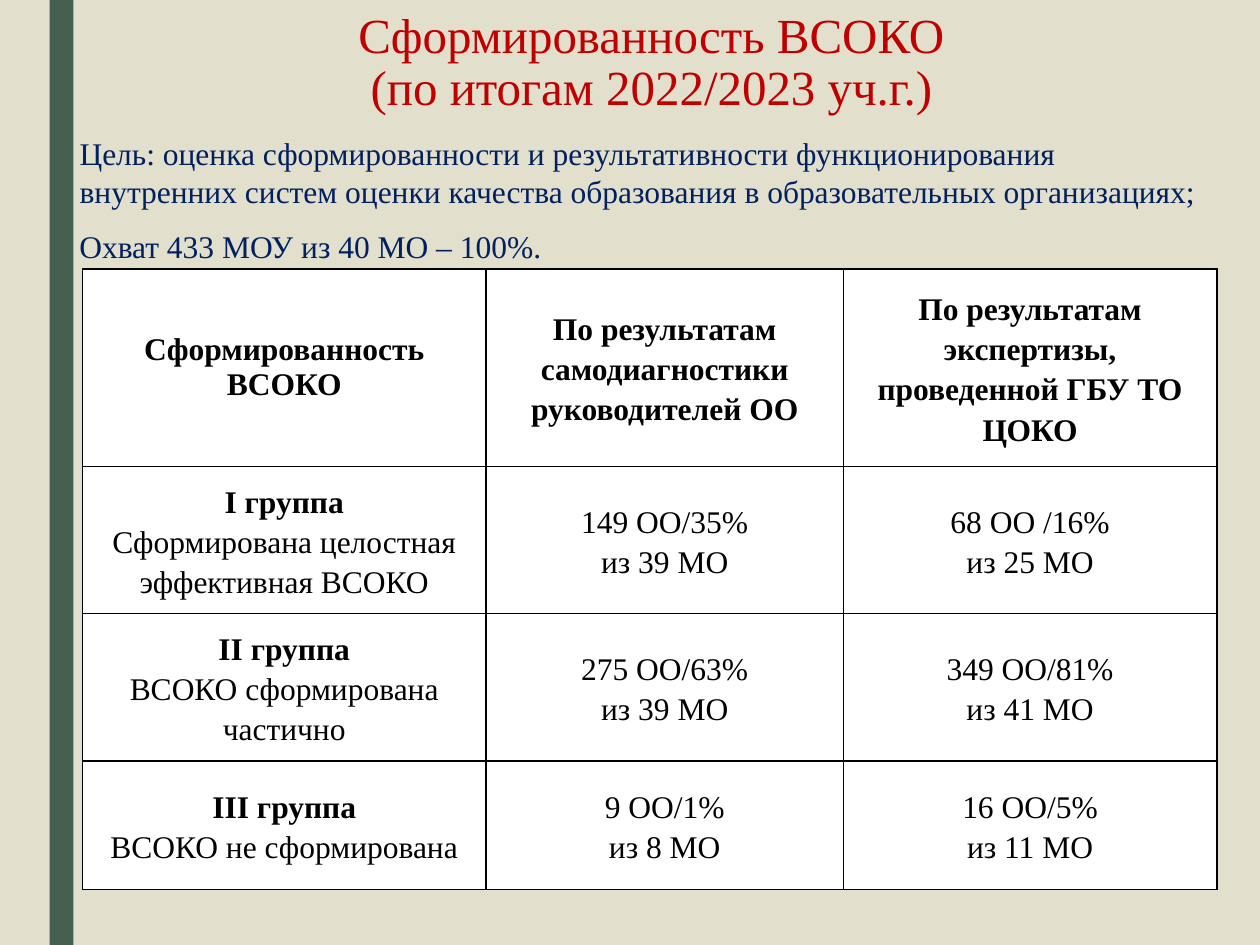
import dataclasses

import lxml.etree
import pptx
import pptx.dml.color
import pptx.enum.shapes
import pptx.enum.text
import pptx.oxml.ns
import pptx.util

Cm = pptx.util.Cm
Align = pptx.enum.text.PP_ALIGN
Anchor = pptx.enum.text.MSO_ANCHOR
qn = pptx.oxml.ns.qn


@dataclasses.dataclass(frozen=True)
class Theme:
    font: str = "Times New Roman"
    head: float = 28
    text: float = 18
    page: str = "E2DFCC"
    bar: str = "455F51"
    red: str = "C00000"
    navy: str = "002060"
    ink: str = "000000"
    cell: str = "FFFFFF"
    rule: float = 1


def paint(fill, color):
    fill.solid()
    fill.fore_color.rgb = pptx.dml.color.RGBColor.from_string(color)


def place(shape, box):
    shape.left, shape.top, shape.width, shape.height = (Cm(n) for n in box)


def plain(para):
    """Take the bullet and indent off a paragraph."""
    props = para._p.get_or_add_pPr()
    props.set("marL", "0")
    props.set("indent", "0")
    lxml.etree.SubElement(props, qn("a:buNone"))


class Deck:
    """Holds the theme and the current slide."""

    def __init__(self, theme):
        self.theme = theme
        self.file = pptx.Presentation()
        self.file.slide_width, self.file.slide_height = Cm(25.4), Cm(19.05)
        self.slide = self.file.slides.add_slide(self.file.slide_layouts[1])
        paint(self.slide.background.fill, theme.page)

    def style(self, para, size, color, align, space=1.0, bold=False):
        para.alignment = align
        para.line_spacing = space
        para.space_before = pptx.util.Pt(0)
        font = para.font
        font.name, font.size, font.bold = self.theme.font, pptx.util.Pt(size), bold
        font.color.rgb = pptx.dml.color.RGBColor.from_string(color)

    def label(self, frame, text, *look):
        frame.word_wrap = True
        frame.auto_size = pptx.enum.text.MSO_AUTO_SIZE.NONE
        frame.vertical_anchor = Anchor.TOP
        frame.text = text
        for para in frame.paragraphs:
            plain(para)
            self.style(para, *look)

    def title(self, box, text):
        shape = self.slide.shapes.title
        place(shape, box)
        self.label(shape.text_frame, text, self.theme.head, self.theme.red,
                   Align.CENTER, 0.89)

    def body(self, box, text):
        shape = self.slide.placeholders[1]
        place(shape, box)
        self.label(shape.text_frame, text, self.theme.text, self.theme.navy,
                   Align.LEFT)

    def note(self, box, text):
        shape = self.slide.shapes.add_textbox(*(Cm(n) for n in box))
        self.label(shape.text_frame, text, self.theme.text, self.theme.navy,
                   Align.JUSTIFY, 1.15)

    def bar(self, box):
        shape = self.slide.shapes.add_shape(
            pptx.enum.shapes.MSO_SHAPE.RECTANGLE, *(Cm(n) for n in box))
        shape.shadow.inherit = False
        paint(shape.fill, self.theme.bar)
        shape.line.fill.background()

    def edge(self, cell):
        """Draw a line on all four sides of a cell."""
        props = cell._tc.get_or_add_tcPr()
        for side in "LRTB":
            line = lxml.etree.SubElement(props, qn(f"a:ln{side}"))
            line.set("w", str(int(pptx.util.Pt(self.theme.rule))))
            fill = lxml.etree.SubElement(line, qn("a:solidFill"))
            lxml.etree.SubElement(fill, qn("a:srgbClr")).set("val", self.theme.ink)

    def table(self, left, top, wide, high, rows):
        frame = self.slide.shapes.add_table(
            len(high), len(wide), Cm(left), Cm(top), Cm(sum(wide)), Cm(sum(high)))
        grid = frame.table
        grid.first_row = grid.horz_banding = False
        for col, size in zip(grid.columns, wide):
            col.width = Cm(size)
        for row, size in zip(grid.rows, high):
            row.height = Cm(size)
        for r, row in enumerate(rows):
            for c, text in enumerate(row):
                cell = grid.cell(r, c)
                first = r == c == 0
                cell.text = text
                cell.vertical_anchor = Anchor.MIDDLE
                if not first:
                    cell.margin_left = cell.margin_right = Cm(0.18)
                    cell.margin_top = cell.margin_bottom = 0
                self.edge(cell)
                paint(cell.fill, self.theme.cell)
                for n, para in enumerate(cell.text_frame.paragraphs):
                    bold = r == 0 or (c == 0 and n == 0)
                    self.style(para, self.theme.text, self.theme.ink,
                               Align.CENTER, 1.0 if first else 1.15, bold)


ROWS = [
    ("Сформированность ВСОКО",
     "По результатам самодиагностики руководителей ОО",
     "По результатам экспертизы, проведенной ГБУ ТО ЦОКО"),
    ("I группа\nСформирована целостная эффективная ВСОКО",
     "149 ОО/35%\nиз 39 МО", "68 ОО /16%\nиз 25 МО"),
    ("II группа\nВСОКО сформирована частично",
     "275 ОО/63%\nиз 39 МО", "349 ОО/81%\nиз 41 МО"),
    ("III группа\nВСОКО не сформирована",
     "9 ОО/1%\nиз 8 МО", "16 ОО/5%\nиз 11 МО"),
]


def main():
    deck = Deck(Theme())
    deck.bar((1, 0, 0.48, 19.05))
    deck.table(1.66, 5.42, (8.14, 7.2, 7.53), (3.98, 2.97, 2.97, 2.59), ROWS)
    deck.title((1.7, 0.1, 22.86, 1.75),
               "Сформированность ВСОКО\n(по итогам 2022/2023 уч.г.)")
    deck.note((1.35, 4.34, 22.2, 1.07), "Охват 433 МОУ из 40 МО – 100%.")
    deck.body((1.35, 2.57, 23.27, 1.8),
              "Цель: оценка сформированности и результативности функционирования "
              "внутренних систем оценки качества образования в образовательных "
              "организациях;")
    deck.file.save("out.pptx")


if __name__ == "__main__":
    main()
